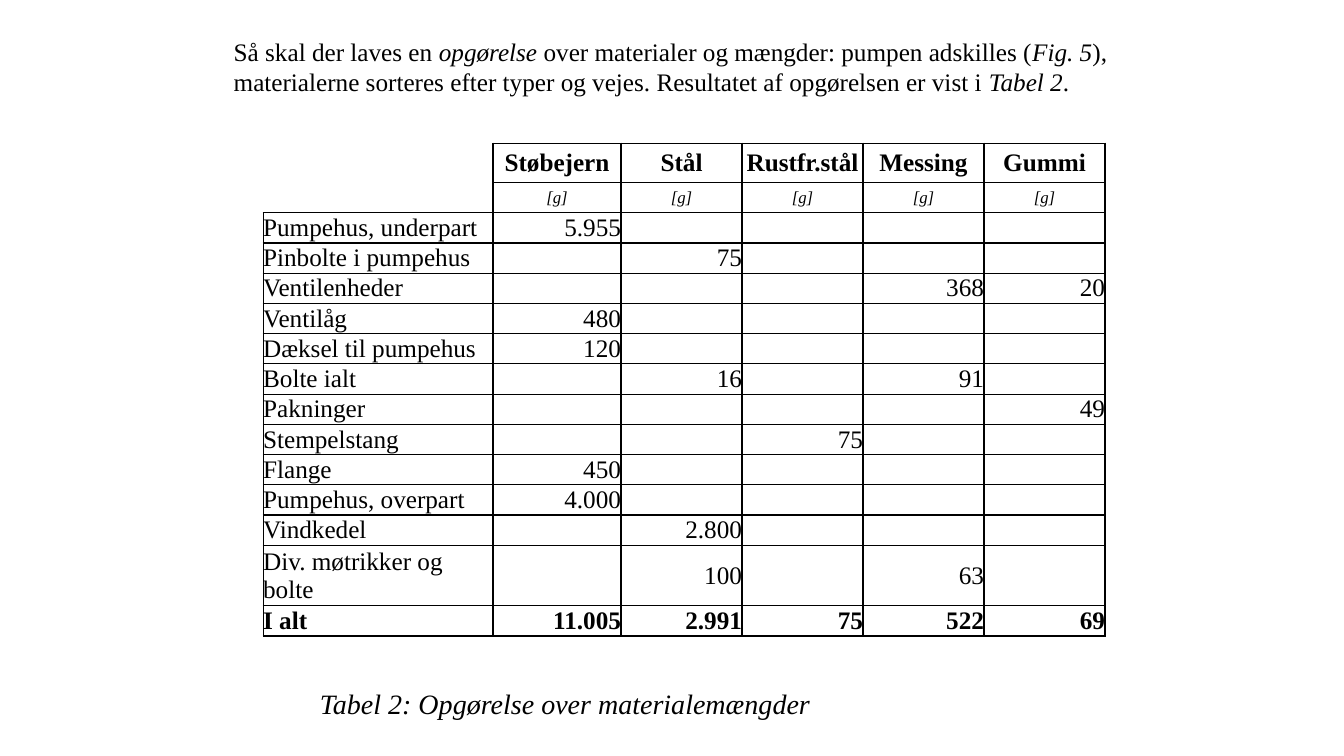
from typing import NamedTuple

from lxml.etree import SubElement
from pptx import Presentation
from pptx.dml.color import RGBColor
from pptx.enum.text import MSO_ANCHOR as Anchor, PP_ALIGN as Align
from pptx.oxml.ns import qn
from pptx.util import Inches, Pt

FONT = "Times New Roman"
COLORS = {"ink": "000000"}
COL_WIDTHS = [2.28, 1.27, 1.2, 1.2, 1.2, 1.2]
LINE_HEIGHT = 0.3


class Row(NamedTuple):
    cells: list[str]
    height: float = LINE_HEIGHT
    size: int = 18
    bold: bool = False
    italic: bool = False
    header: bool = False


class Run(NamedTuple):
    text: str
    italic: bool = False


ROWS = [
    Row(["", "Støbejern", "Stål", "Rustfr.stål", "Messing", "Gummi"],
        height=0.39, bold=True, header=True),
    Row([""] + ["[g]"] * 5, size=12, italic=True, header=True),
    Row(["Pumpehus, underpart", "5.955", "", "", "", ""]),
    Row(["Pinbolte i pumpehus", "", "75", "", "", ""]),
    Row(["Ventilenheder", "", "", "", "368", "20"]),
    Row(["Ventilåg", "480", "", "", "", ""]),
    Row(["Dæksel til pumpehus", "120", "", "", "", ""]),
    Row(["Bolte ialt", "", "16", "", "91", ""]),
    Row(["Pakninger", "", "", "", "", "49"]),
    Row(["Stempelstang", "", "", "75", "", ""]),
    Row(["Flange", "450", "", "", "", ""]),
    Row(["Pumpehus, overpart", "4.000", "", "", "", ""]),
    Row(["Vindkedel", "", "2.800", "", "", ""]),
    Row(["Div. møtrikker og bolte", "", "100", "", "63", ""], height=2 * LINE_HEIGHT),
    Row(["I alt", "11.005", "2.991", "75", "522", "69"], bold=True),
]

INTRO = [
    Run("Så skal der laves en "),
    Run("opgørelse ", italic=True),
    Run("over materialer og mængder: pumpen adskilles ("),
    Run("Fig. 5", italic=True),
    Run("), materialerne sorteres efter typer og vejes. Resultatet af opgørelsen er vist i "),
    Run("Tabel 2", italic=True),
    Run("."),
]
CAPTION = [Run("Tabel 2: Opgørelse over materialemængder", italic=True)]


def style_font(font, size: int, bold: bool = False, italic: bool = False) -> None:
    font.name = FONT
    font.size = Pt(size)
    font.bold = bold
    font.italic = italic
    font.color.rgb = RGBColor.from_string(COLORS["ink"])


def set_borders(cell, visible: str) -> None:
    """Draw the sides named in visible (letters of LRTB) and clear the others."""
    tc_pr = cell._tc.get_or_add_tcPr()
    for side in "LRTB":
        ln = SubElement(tc_pr, qn(f"a:ln{side}"), w=str(Pt(1)))
        if side in visible:
            fill = SubElement(ln, qn("a:solidFill"))
            SubElement(fill, qn("a:srgbClr"), val=COLORS["ink"])
        else:
            SubElement(ln, qn("a:noFill"))


def set_empty_size(p, size: int) -> None:
    """Keep an empty cell from growing its row."""
    end = SubElement(p._p, qn("a:endParaRPr"), sz=str(size * 100))
    SubElement(end, qn("a:latin"), typeface=FONT)


def fill_cell(cell, row: Row, col: int, borders: str) -> None:
    cell.margin_left = cell.margin_right = cell.margin_top = cell.margin_bottom = 0
    cell.vertical_anchor = Anchor.MIDDLE
    set_borders(cell, borders)
    cell.fill.background()
    p = cell.text_frame.paragraphs[0]
    if not row.cells[col]:
        set_empty_size(p, row.size)
        return
    p.text = row.cells[col]
    if row.header:
        p.alignment = Align.CENTER
    else:
        p.alignment = Align.RIGHT if col else Align.LEFT
    style_font(p.runs[0].font, row.size, row.bold, row.italic)


def add_materials_table(slide, left: float, top: float) -> None:
    height = sum(row.height for row in ROWS)
    table = slide.shapes.add_table(
        len(ROWS), len(COL_WIDTHS), Inches(left), Inches(top),
        Inches(sum(COL_WIDTHS)), Inches(height)).table
    table.first_row = table.horz_banding = False
    for column, width in zip(table.columns, COL_WIDTHS):
        column.width = Inches(width)
    for i, row in enumerate(ROWS):
        table.rows[i].height = Inches(row.height)
        for col in range(len(COL_WIDTHS)):
            borders = "LRTB"
            if row.header and col == 0:
                borders = "R" if ROWS[i + 1].header else "RB"
            fill_cell(table.cell(i, col), row, col, borders)


def add_text(slide, box: tuple[float, float, float, float], runs: list[Run], size: int):
    tf = slide.shapes.add_textbox(*map(Inches, box)).text_frame
    tf.word_wrap = True
    p = tf.paragraphs[0]
    for run in runs:
        r = p.add_run()
        r.text = run.text
        style_font(r.font, size, italic=run.italic)
    return tf


def main() -> None:
    prs = Presentation()
    prs.slide_width, prs.slide_height = Inches(13.33), Inches(7.5)
    slide = prs.slides.add_slide(prs.slide_layouts[6])
    add_materials_table(slide, 2.61, 1.42)
    caption = add_text(slide, (3.06, 6.76, 5.09, 0.43), CAPTION, 20)
    caption.word_wrap = False
    caption.vertical_anchor = Anchor.MIDDLE
    caption.paragraphs[0].alignment = Align.CENTER
    add_text(slide, (2.22, 0.31, 8.9, 0.71), INTRO, 18)
    prs.save("out.pptx")


if __name__ == "__main__":
    main()
